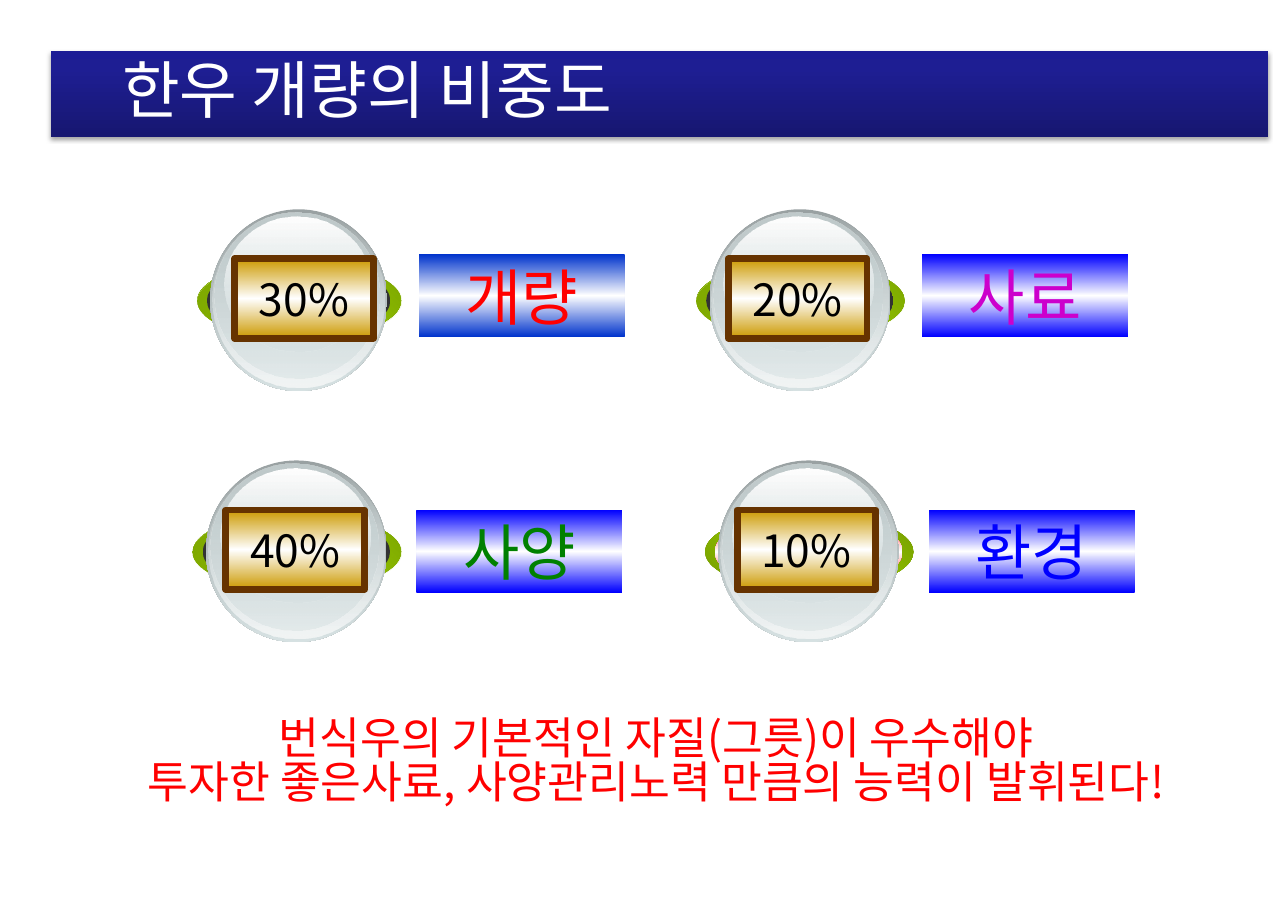
import dataclasses

import lxml.etree
import pptx
import pptx.dml.color
import pptx.enum.shapes
import pptx.enum.text
import pptx.oxml.ns
import pptx.util

Inches = pptx.util.Inches
Pt = pptx.util.Pt
RGBColor = pptx.dml.color.RGBColor
qn = pptx.oxml.ns.qn
ShapeKind = pptx.enum.shapes.MSO_SHAPE
Align = pptx.enum.text.PP_ALIGN
Anchor = pptx.enum.text.MSO_ANCHOR


@dataclasses.dataclass(frozen=True)
class Theme:
    font: str = "Noto Sans CJK KR"
    title_size: int = 41
    label_size: int = 40
    text_size: int = 29
    white: str = "FFFFFF"
    black: str = "000000"
    red: str = "FF0000"
    purple: str = "CC00CC"
    green: str = "008000"
    blue: str = "0000FF"
    royal: str = "0033CC"
    gold: str = "CC9900"
    brown: str = "663300"
    bar: tuple = ((0, "171771"), (80, "1E1E93"), (100, "1C1C96"))
    ring: tuple = ((0, "759C00"), (50, "99CC00"), (100, "759C00"))
    sheen: tuple = ((0, "7EA700"), (100, "99CC00", 0))
    shade: tuple = ((0, "333333"), (100, "333333"))
    rim: tuple = ((0, "99A1A2"), (100, "D6E1E2"))
    glass: tuple = ((0, "D6E1E2", 0), (100, "F2F5F5"))
    bowl: tuple = ((0, "C1CBCC"), (100, "D6E1E2", 48))
    gloss: tuple = ((0, "FFFFFF"), (100, "D6E1E2", 38))


THEME = Theme()


def band(edge):
    return (0, edge), (50, THEME.white), (100, edge)


TITLE = "한우 개량의 비중도"
MESSAGE = [
    "번식우의 기본적인 자질(그릇)이 우수해야",
    "투자한 좋은사료, 사양관리노력 만큼의 능력이 발휘된다!",
]

FACTORS = [
    dict(name="개량", share="30%", color=THEME.red, edge=THEME.royal,
         orb=(1.79, 2.38, 1.85), label=(3.8, 2.31), plate=(2.13, 2.35)),
    dict(name="환경", share="10%", color=THEME.blue, edge=THEME.blue,
         orb=(6.4, 4.66, 1.89), label=(8.43, 4.63), plate=(6.69, 4.63),
         shade=band(THEME.red)),
    dict(name="사양", share="40%", color=THEME.green, edge=THEME.blue,
         orb=(1.75, 4.66, 1.89), label=(3.78, 4.63), plate=(2.05, 4.63)),
    dict(name="사료", share="20%", color=THEME.purple, edge=THEME.blue,
         orb=(6.32, 2.38, 1.89), label=(8.37, 2.31), plate=(6.61, 2.35)),
]

ORB_WIDTH = 1.89
RING_LAYERS = [
    ((0, 0, 1.89, 0.7), THEME.ring, 315),
    ((0, 0, 1.89, 0.7), THEME.sheen, 45),
]
GLASS_LAYERS = [
    ((0.12, -0.48, 1.64, 1.65), THEME.rim, 90),
    ((0.14, -0.47, 1.6, 1.61), THEME.glass, 90),
    ((0.16, -0.45, 1.53, 1.51), THEME.bowl, 90),
    ((0.25, -0.41, 1.36, 1.22), THEME.gloss, 90),
]


def set_gradient(shape, stops, angle):
    shape.fill.gradient()
    shape.fill.gradient_angle = 360 - angle
    stop_list = shape._element.spPr.find(qn("a:gradFill")).find(qn("a:gsLst"))
    for old_stop in list(stop_list):
        stop_list.remove(old_stop)
    for position, color, *opacity in stops:
        stop = lxml.etree.SubElement(stop_list, qn("a:gs"), pos=str(position * 1000))
        color_node = lxml.etree.SubElement(stop, qn("a:srgbClr"), val=color)
        if opacity:
            lxml.etree.SubElement(color_node, qn("a:alpha"), val=str(opacity[0] * 1000))


def add_gradient_shape(shapes, kind, box, stops, angle):
    shape = shapes.add_shape(kind, *map(Inches, box))
    shape.shadow.inherit = False
    shape.line.fill.background()
    set_gradient(shape, stops, angle)
    return shape


def format_paragraph(paragraph, size, color, alignment):
    paragraph.alignment = alignment
    paragraph.font.name = THEME.font
    paragraph.font.size = Pt(size)
    paragraph.font.color.rgb = RGBColor.from_string(color)
    for run in paragraph.runs:
        properties = run._r.get_or_add_rPr()
        lxml.etree.SubElement(properties, qn("a:ea"), typeface=THEME.font)


def set_text(shape, lines, size, color, alignment=Align.CENTER, anchor=Anchor.MIDDLE,
             wrap=True, insets=(0.1, 0.05)):
    frame = shape.text_frame
    frame.text = "\n".join(lines)
    frame.word_wrap = wrap
    frame.vertical_anchor = anchor
    frame.margin_left = frame.margin_right = Inches(insets[0])
    frame.margin_top = frame.margin_bottom = Inches(insets[1])
    for paragraph in frame.paragraphs:
        format_paragraph(paragraph, size, color, alignment)


def add_title(slide):
    bar = add_gradient_shape(slide.shapes, ShapeKind.RECTANGLE,
                             (0.46, 0.46, 11.05, 0.78), THEME.bar, 270)
    effects = bar._element.spPr.find(qn("a:effectLst"))
    shadow = lxml.etree.SubElement(
        effects, qn("a:outerShdw"), blurRad=str(Pt(3.1)), dist=str(Pt(1.8)),
        dir="5400000", rotWithShape="0")
    color_node = lxml.etree.SubElement(shadow, qn("a:srgbClr"), val=THEME.black)
    lxml.etree.SubElement(color_node, qn("a:alpha"), val="35000")

    title = slide.shapes.title
    title._element.addprevious(bar._element)
    title.left, title.top, title.width, title.height = map(Inches, (1, 0.42, 11.01, 0.76))
    set_text(title, [TITLE], THEME.title_size, THEME.white, Align.LEFT, insets=(0.11, 0.05))
    title.text_frame.auto_size = pptx.enum.text.MSO_AUTO_SIZE.NONE


def add_orb(slide, left, top, width, shade):
    shade_layer = ((0.09, 0, 1.7, 0.7), shade or THEME.shade, 90)
    rings = RING_LAYERS[:1] if shade else RING_LAYERS
    scale = width / ORB_WIDTH
    group = slide.shapes.add_group_shape()
    for (x, y, layer_width, height), stops, angle in [*rings, shade_layer, *GLASS_LAYERS]:
        box = (left + x * scale, top + y, layer_width * scale, height)
        add_gradient_shape(group.shapes, ShapeKind.OVAL, box, stops, angle)


def add_factor(slide, factor):
    add_orb(slide, *factor["orb"], factor.get("shade"))
    label = add_gradient_shape(slide.shapes, ShapeKind.RECTANGLE,
                               (*factor["label"], 1.87, 0.75), band(factor["edge"]), 90)
    set_text(label, [factor["name"]], THEME.label_size, factor["color"], wrap=False)
    plate = add_gradient_shape(slide.shapes, ShapeKind.RECTANGLE,
                               (*factor["plate"], 1.26, 0.72), band(THEME.gold), 90)
    plate.line.color.rgb = RGBColor.from_string(THEME.brown)
    plate.line.width = Pt(4.5)
    set_text(plate, [factor["share"]], THEME.text_size, THEME.black)


def add_message(slide):
    message = slide.shapes.add_textbox(*map(Inches, (0.2, 6.47, 11.51, 1.09)))
    set_text(message, MESSAGE, THEME.text_size, THEME.red,
             anchor=Anchor.TOP, insets=(0.11, 0.06))
    for paragraph in message.text_frame.paragraphs:
        paragraph.line_spacing = 0.83


def main():
    presentation = pptx.Presentation()
    presentation.slide_width = Inches(11.69)
    presentation.slide_height = Inches(8.27)
    slide = presentation.slides.add_slide(presentation.slide_layouts[5])
    add_title(slide)
    add_message(slide)
    for factor in FACTORS:
        add_factor(slide, factor)
    presentation.save("out.pptx")


if __name__ == "__main__":
    main()
